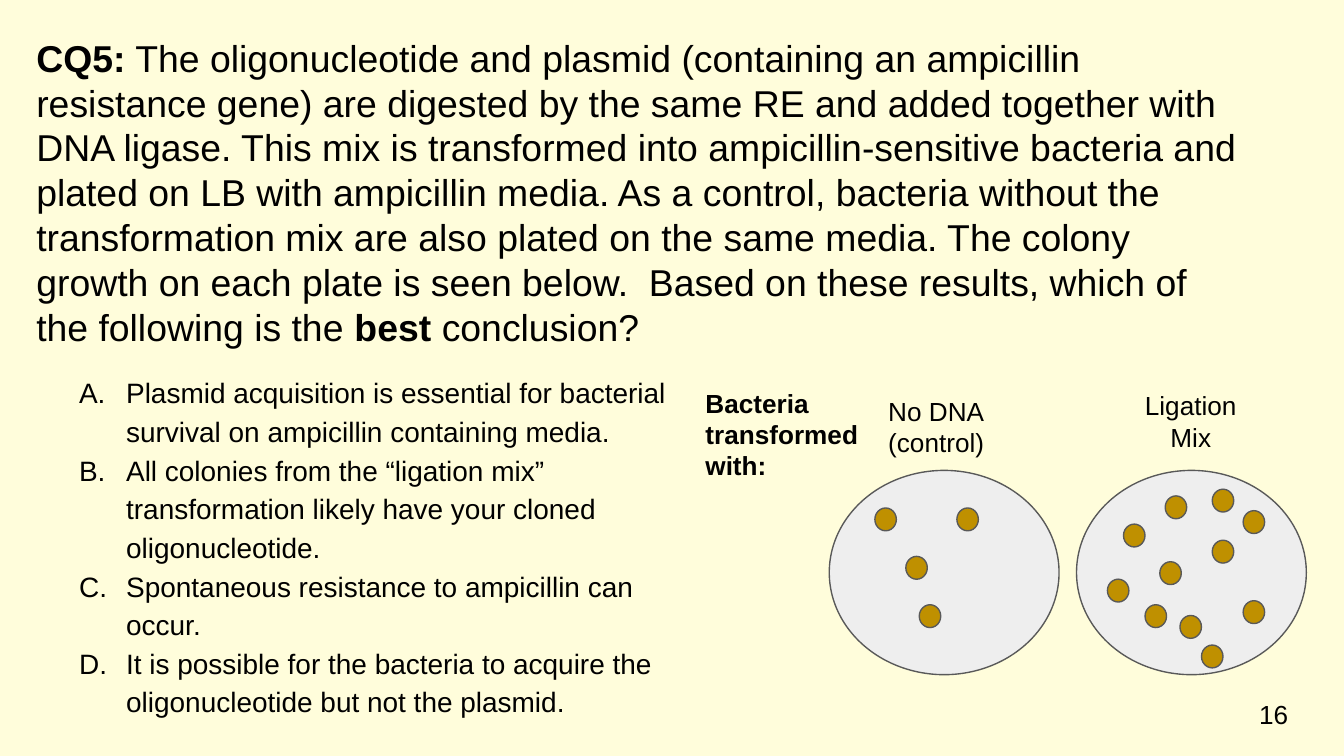
"""Build the clicker question slide on plasmid transformation."""
from typing import NamedTuple

from lxml import etree
from pptx import Presentation
from pptx import util as u
from pptx.dml.color import RGBColor
from pptx.enum import shapes, text
from pptx.oxml.ns import qn

COLOURS = {"page": "FFFDDB", "ink": "000000", "agar": "EEEEEE",
           "colony": "BF9000", "outline": "595959"}
FONT = "Arial"
PAGE_WIDTH = 10
PAGE_HEIGHT = PAGE_WIDTH * 9 / 16
PLATE_TOP, PLATE_WIDTH, PLATE_HEIGHT = 3.5, 1.71, 1.52
COLONY_WIDTH, COLONY_HEIGHT = 0.16, 0.17


class Span(NamedTuple):
    words: str
    bold: bool = False


class Label(NamedTuple):
    left: float
    top: float
    width: float
    height: float
    span: Span
    align: text.PP_ALIGN = text.PP_ALIGN.LEFT
    anchor: text.MSO_ANCHOR = text.MSO_ANCHOR.TOP


class Plate(NamedTuple):
    left: float
    colonies: tuple[tuple[float, float], ...]


QUESTION = (
    Span("CQ5:", True),
    Span(" The oligonucleotide and plasmid (containing an ampicillin resistance gene) "
         "are digested by the same RE and added together with DNA ligase. This mix is "
         "transformed into ampicillin-sensitive bacteria and plated on LB with ampicillin "
         "media. As a control, bacteria without the transformation mix are also plated on "
         "the same media. The colony growth on each plate is seen below.  Based on these "
         "results, which of the following is the "),
    Span("best", True),
    Span(" conclusion?"),
)
ANSWERS = (
    "Plasmid acquisition is essential for bacterial survival on ampicillin containing media.",
    "All colonies from the “ligation mix” transformation likely have your cloned oligonucleotide.",
    "Spontaneous resistance to ampicillin can occur.",
    "It is possible for the bacteria to acquire the oligonucleotide but not the plasmid.",
)
LABELS = (
    Label(9.27, 5.1, 0.6, 0.43, Span("16"), anchor=text.MSO_ANCHOR.MIDDLE),
    Label(5.15, 2.78, 1.61, 0.5, Span("Bacteria transformed with:", True)),
    Label(6.51, 2.84, 1.38, 0.5, Span("No DNA (control)")),
    Label(8.3, 2.8, 1.12, 0.5, Span("Ligation Mix"), text.PP_ALIGN.CENTER),
)
PLATES = (
    Plate(6.17, ((6.51, 3.78), (6.74, 4.14), (7.12, 3.78), (6.84, 4.5))),
    Plate(8.01, ((9.02, 4.02), (8.36, 3.9), (8.52, 4.5), (8.24, 4.31),
                 (8.78, 4.58), (8.67, 3.69), (9.25, 4.47), (9.25, 3.8),
                 (8.63, 4.18), (9.02, 3.64), (8.94, 4.8))),
)


def colour(name: str) -> RGBColor:
    """Look up a named colour."""
    return RGBColor.from_string(COLOURS[name])


def set_all(target, values: dict) -> None:
    """Set every attribute named in the dict."""
    for name, value in values.items():
        setattr(target, name, value)


def place(box, left: float, top: float, width: float, height: float) -> None:
    """Move and size a shape in inches."""
    set_all(box, {"left": u.Inches(left), "top": u.Inches(top),
                  "width": u.Inches(width), "height": u.Inches(height)})


def prepare_frame(frame, anchor: text.MSO_ANCHOR = text.MSO_ANCHOR.TOP) -> None:
    """Give a text frame its wrapping, margins and anchor."""
    margins = {f"margin_{side}": u.Inches(0.1) for side in ("left", "top", "right", "bottom")}
    set_all(frame, {"word_wrap": True, "auto_size": text.MSO_AUTO_SIZE.NONE,
                    "vertical_anchor": anchor, **margins})


def add_span(para, span: Span, size: float) -> None:
    """Add one formatted run to a paragraph."""
    run = para.add_run()
    run.text = span.words
    set_all(run.font, {"name": FONT, "size": u.Pt(size), "bold": span.bold})
    run.font.color.rgb = colour("ink")


def add_question(page) -> None:
    """Fill the title placeholder with the question."""
    title = page.shapes.title
    place(title, 0.17, 0.16, 9.17, 0.63)
    prepare_frame(title.text_frame)
    para = title.text_frame.paragraphs[0]
    para.alignment = text.PP_ALIGN.LEFT
    for span in QUESTION:
        add_span(para, span, 20)


def add_answers(page) -> None:
    """Add the lettered list of answers."""
    box = page.shapes.add_textbox(0, 0, 0, 0)
    place(box, 0.34, 2.66, 4.88, 2.67)
    frame = box.text_frame
    prepare_frame(frame)
    for index, answer in enumerate(ANSWERS):
        para = frame.add_paragraph() if index else frame.paragraphs[0]
        para.line_spacing = 1.15
        add_span(para, Span(answer), 15)
        properties = para._p.get_or_add_pPr()
        properties.set("marL", str(u.Inches(0.5)))
        properties.set("indent", str(u.Inches(-0.35)))
        bullet_colour = etree.SubElement(properties, qn("a:buClr"))
        etree.SubElement(bullet_colour, qn("a:srgbClr"), val=COLOURS["ink"])
        etree.SubElement(properties, qn("a:buFont"), typeface=FONT)
        etree.SubElement(properties, qn("a:buAutoNum"), type="alphaUcPeriod")


def add_label(page, label: Label) -> None:
    """Add a short text box."""
    box = page.shapes.add_textbox(0, 0, 0, 0)
    place(box, *label[:4])
    prepare_frame(box.text_frame, label.anchor)
    para = box.text_frame.paragraphs[0]
    para.alignment = label.align
    add_span(para, label.span, 14)


def add_oval(page, left: float, top: float, width: float, height: float, fill: str) -> None:
    """Add an outlined ellipse."""
    oval = page.shapes.add_shape(shapes.MSO_SHAPE.OVAL, 0, 0, 0, 0)
    place(oval, left, top, width, height)
    oval.shadow.inherit = False
    oval.fill.solid()
    oval.fill.fore_color.rgb = colour(fill)
    oval.line.color.rgb = colour("outline")
    oval.line.width = u.Pt(0.75)


def add_plate(page, plate: Plate) -> None:
    """Add a culture plate with its colonies."""
    add_oval(page, plate.left, PLATE_TOP, PLATE_WIDTH, PLATE_HEIGHT, "agar")
    for left, top in plate.colonies:
        add_oval(page, left, top, COLONY_WIDTH, COLONY_HEIGHT, "colony")


def main() -> None:
    """Build and save the deck."""
    deck = Presentation()
    set_all(deck, {"slide_width": u.Inches(PAGE_WIDTH), "slide_height": u.Inches(PAGE_HEIGHT)})
    page = deck.slides.add_slide(deck.slide_layouts[5])
    page.background.fill.solid()
    page.background.fill.fore_color.rgb = colour("page")
    add_question(page)
    add_answers(page)
    for plate in PLATES:
        add_plate(page, plate)
    for label in LABELS:
        add_label(page, label)
    deck.save("out.pptx")


if __name__ == "__main__":
    main()
